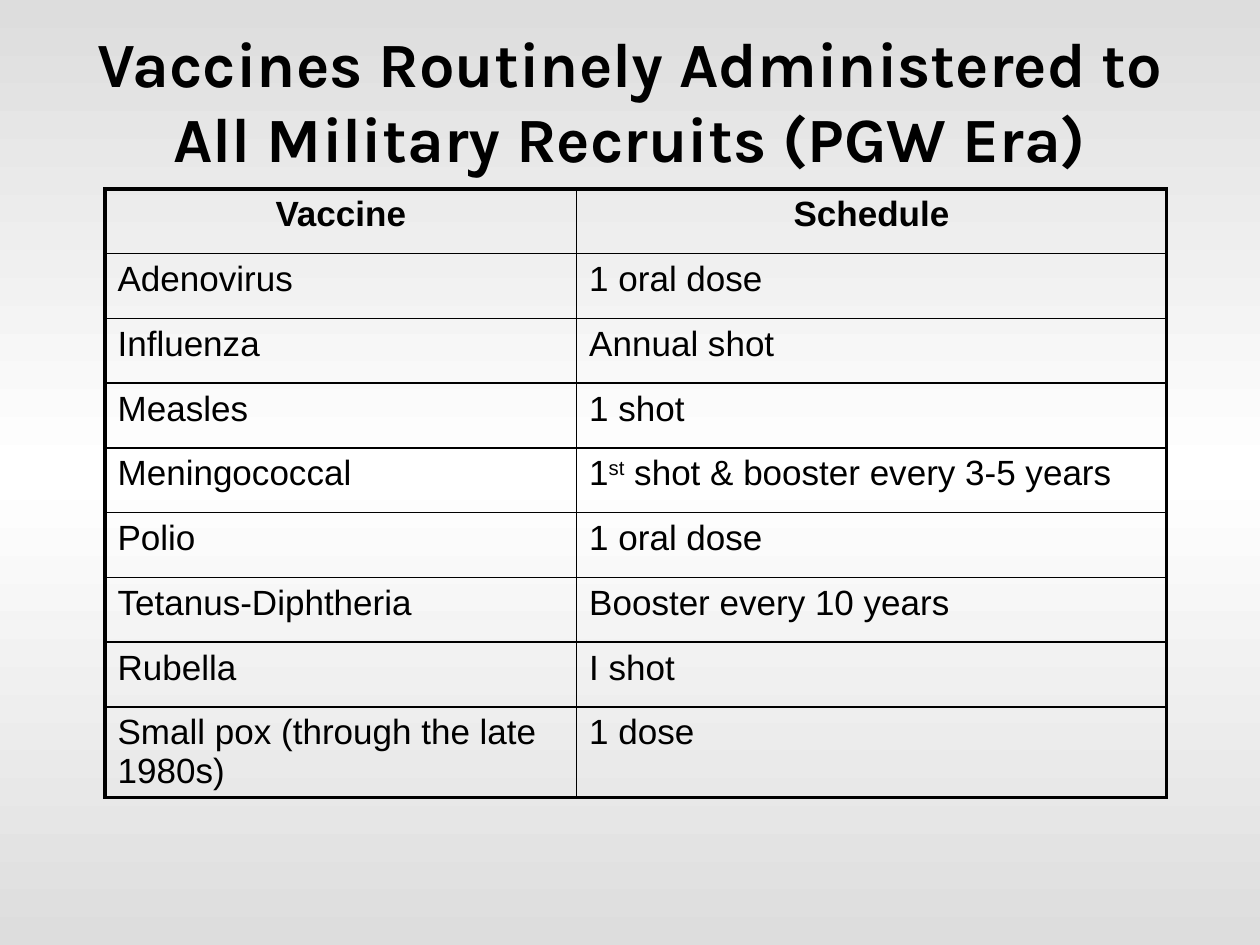
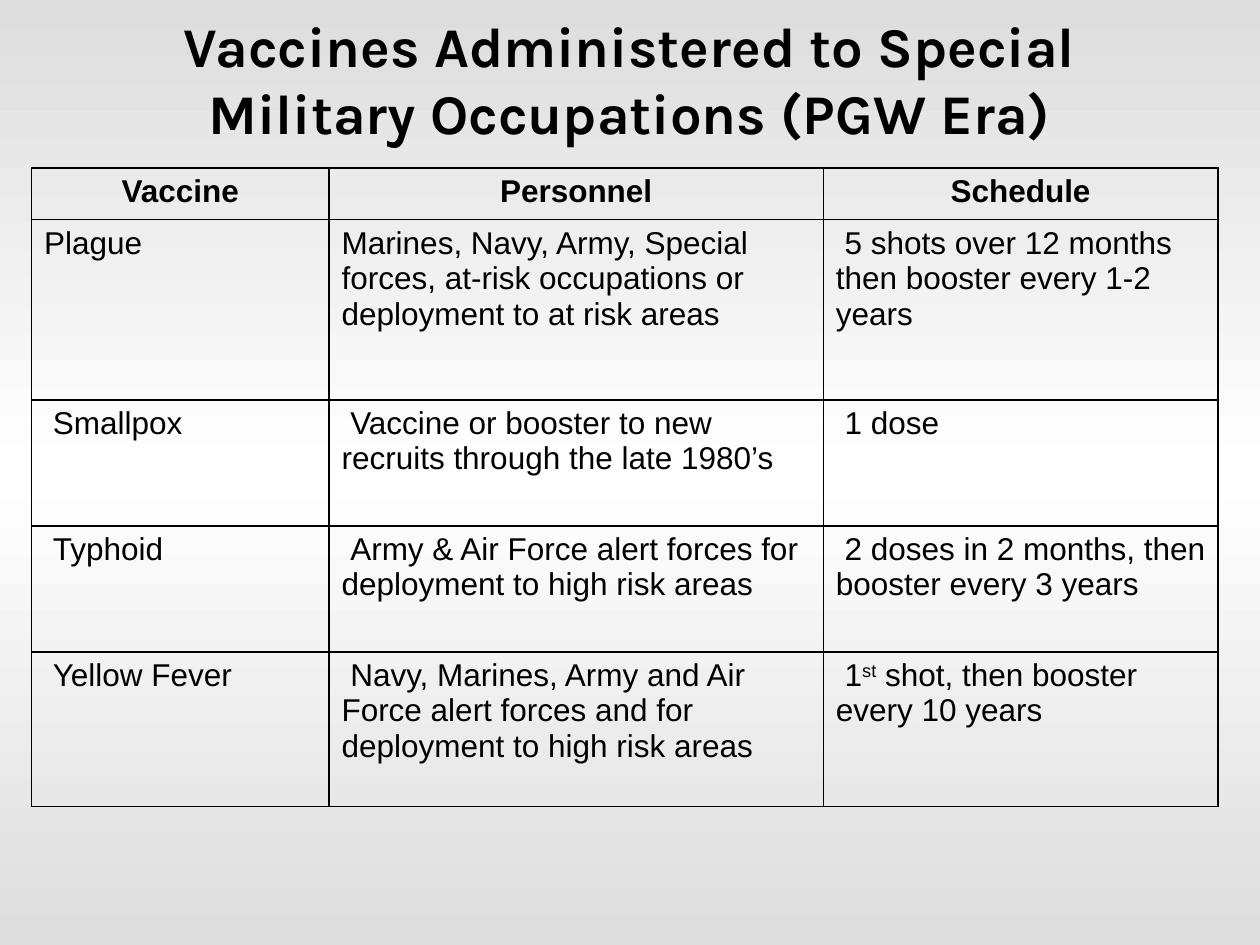
from copy import deepcopy

from lxml.etree import SubElement
from pptx import Presentation
from pptx.dml.color import RGBColor
from pptx.enum.text import MSO_ANCHOR, MSO_AUTO_SIZE, PP_ALIGN
from pptx.oxml.ns import qn
from pptx.util import Pt

BLACK = RGBColor(0x00, 0x00, 0x00)
WHITE = RGBColor(0xFF, 0xFF, 0xFF)
GREY = RGBColor(0xDD, 0xDD, 0xDD)

TITLE_FONT, BODY_FONT = "Karla", "Arial"
TITLE_LEFT, TITLE_WIDTH, TITLE_HEIGHT = 36, 648, 90
THIN, THICK = 1, 2.25
FIRST_LINE_INDENT = 5

# Text between carets is superscript.
RECRUIT_ROWS = [
    ["Vaccine", "Schedule"],
    ["Adenovirus", "1 oral dose"],
    ["Influenza", "Annual shot"],
    ["Measles", "1 shot"],
    ["Meningococcal", "1^st^ shot & booster every 3-5 years"],
    ["Polio", "1 oral dose"],
    ["Tetanus-Diphtheria", "Booster every 10 years"],
    ["Rubella", "I shot"],
    ["Small pox (through the late 1980s)", "1 dose"],
]

# A leading ">" indents the first line of a paragraph.
SPECIAL_ROWS = [
    ["Vaccine", "Personnel", "Schedule"],
    ["Plague",
     "Marines, Navy, Army, Special forces, at-risk occupations or deployment to at risk areas",
     ">5 shots over 12 months\nthen booster every 1-2 years"],
    [">Smallpox", ">Vaccine or booster to new recruits through the late 1980’s", ">1 dose"],
    [">Typhoid",
     ">Army & Air Force alert forces for deployment to high risk areas",
     ">2 doses in 2 months, then booster every 3 years"],
    [">Yellow Fever",
     ">Navy, Marines, Army and Air Force alert forces and for deployment to high risk areas",
     ">1^st^ shot, then booster every 10 years"],
]


def set_font(font, **values):
    font.color.rgb = BLACK
    for name, value in values.items():
        setattr(font, name, value)


def set_background(master):
    """Vertical gradient, grey to white to grey, for all slides."""
    fill = master.background.fill
    fill.gradient()
    fill.gradient_angle = 270
    stops = master.element.find(".//" + qn("a:gsLst"))
    middle = deepcopy(stops[0])
    middle.set("pos", "50000")
    stops.insert(1, middle)
    for stop, colour in zip(fill.gradient_stops, (GREY, WHITE, GREY)):
        stop.color.rgb = colour


def add_titled_slide(prs, text, top, size):
    slide = prs.slides.add_slide(prs.slide_layouts[5])
    title = slide.shapes.title
    box = dict(left=TITLE_LEFT, top=top, width=TITLE_WIDTH, height=TITLE_HEIGHT)
    for name, value in box.items():
        setattr(title, name, Pt(value))
    tf = title.text_frame
    tf.text = text
    tf.word_wrap = True
    tf.auto_size = MSO_AUTO_SIZE.NONE
    tf.vertical_anchor = MSO_ANCHOR.MIDDLE
    p = tf.paragraphs[0]
    p.alignment = PP_ALIGN.CENTER
    set_font(p.runs[0].font, name=TITLE_FONT, size=Pt(size), bold=True)
    return slide


def fill_cell(cell, text, size, header):
    tf = cell.text_frame
    for i, line in enumerate(text.split("\n")):
        p = tf.add_paragraph() if i else tf.paragraphs[0]
        p.alignment = PP_ALIGN.CENTER if header else PP_ALIGN.LEFT
        if line.startswith(">"):
            p._p.get_or_add_pPr().set("indent", str(Pt(FIRST_LINE_INDENT)))
        for j, part in enumerate(line.lstrip(">").split("^")):
            r = p.add_run()
            r.text = part
            set_font(r.font, name=BODY_FONT, size=Pt(size), bold=header)
            if j % 2:
                r._r.get_or_add_rPr().set("baseline", "30000")


def set_borders(cell, widths):
    """Draw the left, right, top and bottom borders, in that order."""
    cell.fill.background()
    tc_pr = cell._tc.get_or_add_tcPr()
    for i, (side, width) in enumerate(zip("LRTB", widths)):
        ln = SubElement(tc_pr, qn("a:ln" + side), w=str(Pt(width)))
        solid = SubElement(ln, qn("a:solidFill"))
        SubElement(solid, qn("a:srgbClr"), val=str(BLACK))
        tc_pr.insert(i, ln)


def add_bordered_table(slide, rows, left, top, col_widths, row_heights, size, outer):
    frame = slide.shapes.add_table(len(rows), len(col_widths), Pt(left), Pt(top),
                                   Pt(sum(col_widths)), Pt(sum(row_heights)))
    table = frame.table
    table.first_row = table.horz_banding = False
    for col, width in zip(table.columns, col_widths):
        col.width = Pt(width)
    for row, height in zip(table.rows, row_heights):
        row.height = Pt(height)
    last_row, last_col = len(rows) - 1, len(col_widths) - 1
    for y, row in enumerate(rows):
        for x, text in enumerate(row):
            cell = table.cell(y, x)
            fill_cell(cell, text, size, header=y == 0)
            on_edge = (x == 0, x == last_col, y == 0, y == last_row)
            set_borders(cell, [outer if edge else THIN for edge in on_edge])


def main():
    prs = Presentation()
    prs.slide_width, prs.slide_height = Pt(720), Pt(540)
    set_background(prs.slide_master)

    slide = add_titled_slide(
        prs, "Vaccines Routinely Administered to All Military Recruits (PGW Era)", 12, 36)
    add_bordered_table(slide, RECRUIT_ROWS, 60, 108, [269.5, 337], [37] * 8 + [46],
                       size=20, outer=THICK)

    slide = add_titled_slide(
        prs, "Vaccines Administered to Special Military Occupations (PGW Era)", 0, 32)
    add_bordered_table(slide, SPECIAL_ROWS, 18, 96, [170, 282.5, 225.5],
                       [29.5, 103, 72, 72, 88.5], size=18, outer=THIN)

    prs.save("out.pptx")


if __name__ == "__main__":
    main()
